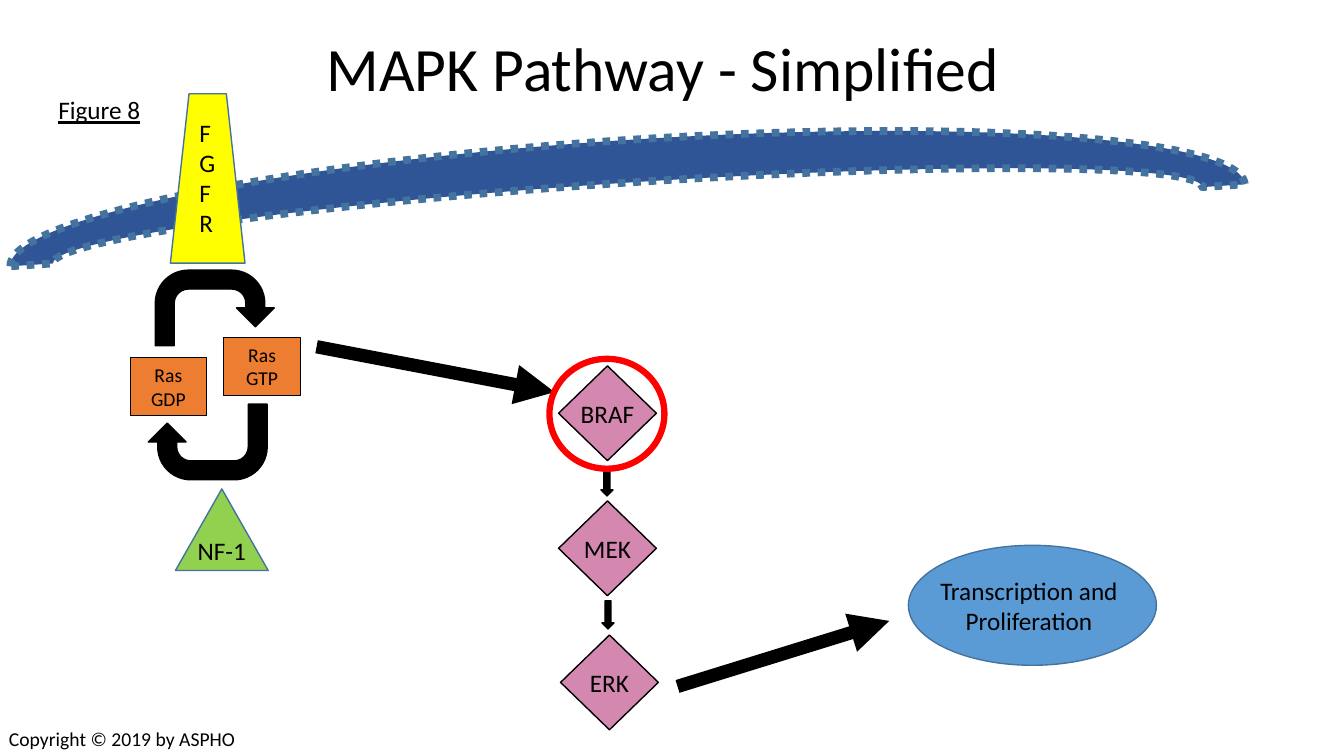
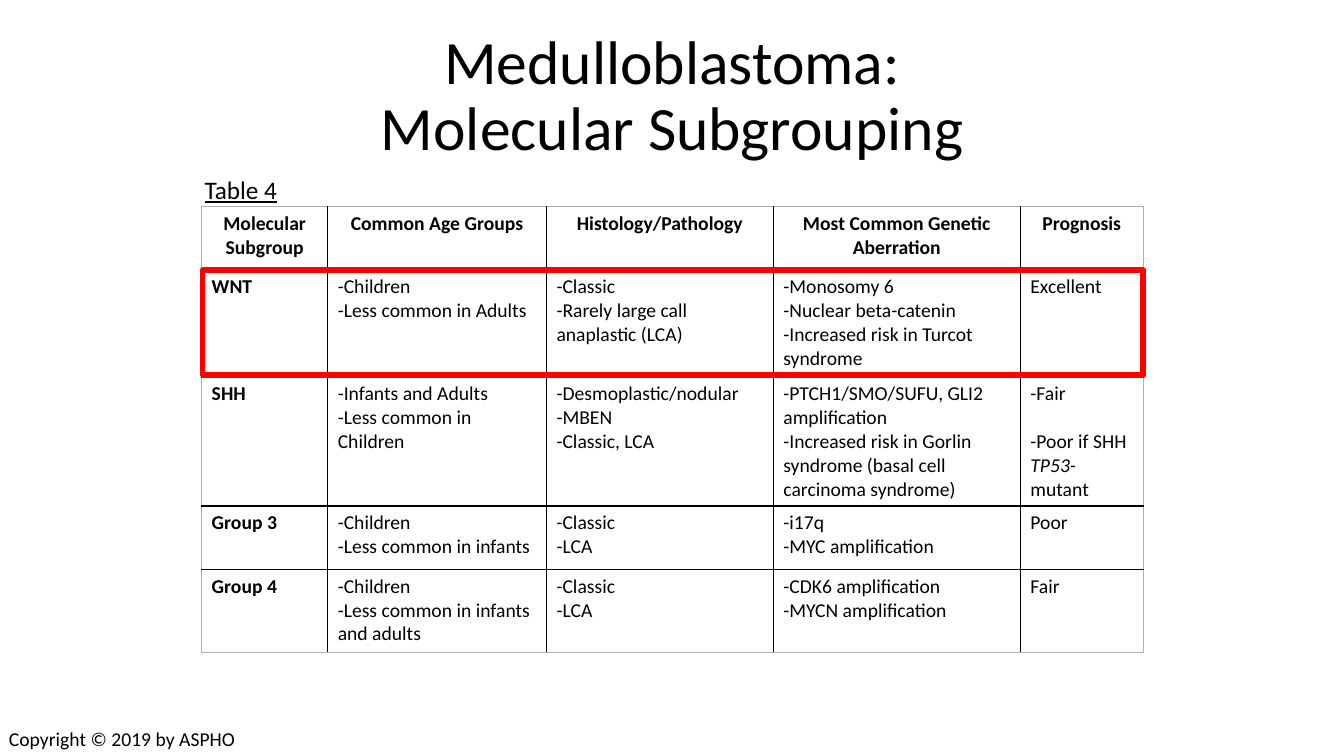
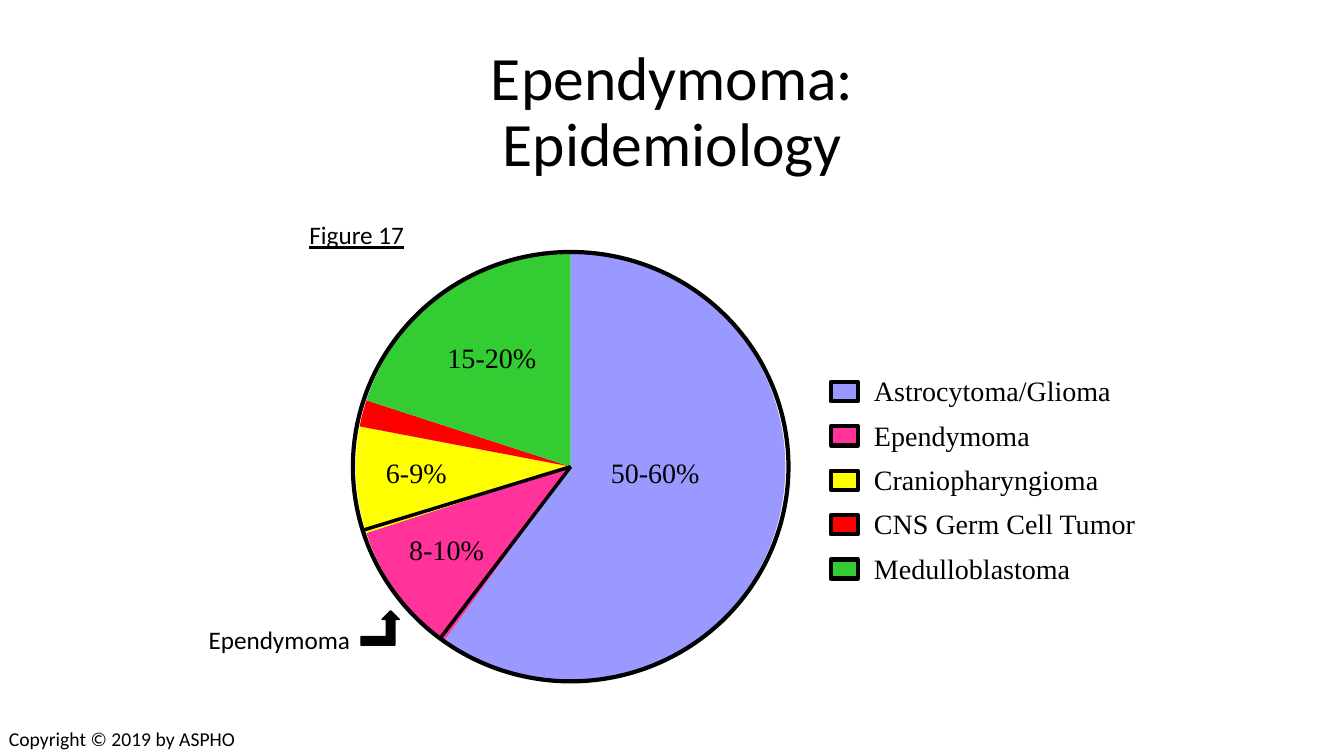
from pptx import Presentation
from pptx.chart.data import CategoryChartData
from pptx.dml.color import RGBColor
from pptx.enum.chart import XL_CHART_TYPE
from pptx.enum.dml import MSO_LINE
from pptx.enum.shapes import MSO_CONNECTOR, MSO_SHAPE
from pptx.enum.text import MSO_ANCHOR, PP_ALIGN
from pptx.oxml import parse_xml
from pptx.oxml.ns import nsdecls, qn
from pptx.oxml.xmlchemy import OxmlElement
from pptx.util import Emu, Pt

# Shared style: 100 px to the inch
BLACK = RGBColor(0x00, 0x00, 0x00)
RED = RGBColor(0xFF, 0x00, 0x00)
YELLOW = RGBColor(0xFF, 0xFF, 0x00)
NAVY = RGBColor(0x2F, 0x55, 0x97)
BLUE = RGBColor(0x5B, 0x9B, 0xD5)
EDGE = RGBColor(0x43, 0x73, 0x9E)
ORANGE = RGBColor(0xED, 0x7D, 0x31)
LIME = RGBColor(0x92, 0xD0, 0x50)
MAGENTA = RGBColor(0xA9, 0x0E, 0x5E)
LAVENDER = RGBColor(0x99, 0x99, 0xFF)
PINK = RGBColor(0xFF, 0x33, 0x99)
GREEN = RGBColor(0x33, 0xCC, 0x33)
GRAY = RGBColor(0xB0, 0xB0, 0xB0)
SANS, SERIF = "Calibri", "Times New Roman"
FOOTER = "Copyright © 2019 by ASPHO"

# Pathway content
RAS_STATES = [("Ras\nGDP", (129, 355, 76, 57)), ("Ras\nGTP", (222, 335, 76, 57))]
RAS_CYCLE = [((154, 268, 118, 75), 0), ((147, 401, 118, 75), 180)]
KINASES = [("BRAF", 554, 363), ("MEK", 554, 497), ("ERK", 556, 630)]
KINASE_STEPS = [(596, 464), (597, 596)]
SIGNALS = [((314, 344), (550, 389)), ((672, 681), (882, 616))]

# Subgroup content: a cell is a list of lines
GENE = "TP53-"
COLUMN_WIDTHS = [125, 217, 225, 245, 122]
ROW_HEIGHTS = [63, 106, 128, 63, 82]
SUBGROUPS = [
    [["Molecular Subgroup"], ["Common Age Groups"], ["Histology/Pathology"],
     ["Most Common Genetic Aberration"], ["Prognosis"]],
    [["WNT"], ["-Children", "-Less common in Adults"],
     ["-Classic", "-Rarely large call anaplastic (LCA)"],
     ["-Monosomy 6", "-Nuclear beta-catenin", "-Increased risk in Turcot syndrome"],
     ["Excellent"]],
    [["SHH"], ["-Infants and Adults", "-Less common in Children"],
     ["-Desmoplastic/nodular", "-MBEN", "-Classic, LCA"],
     ["-PTCH1/SMO/SUFU, GLI2 amplification",
      "-Increased risk in Gorlin syndrome (basal cell carcinoma syndrome)"],
     ["-Fair", "-Poor if SHH TP53-mutant"]],
    [["Group 3"], ["-Children", "-Less common in infants"], ["-Classic", "-LCA"],
     ["-i17q", "-MYC amplification"], ["Poor"]],
    [["Group 4"], ["-Children", "-Less common in infants and adults"],
     ["-Classic", "-LCA"], ["-CDK6 amplification", "-MYCN amplification"], ["Fair"]],
]

# Epidemiology content
TUMORS = [
    ("Astrocytoma/Glioma", 60, LAVENDER),
    ("Ependymoma", 10, PINK),
    ("Craniopharyngioma", 8, YELLOW),
    ("CNS Germ Cell Tumor", 2, RED),
    ("Medulloblastoma", 20, GREEN),
]
SHARES = [("50-60%", 596, 447), ("15-20%", 434, 333), ("8-10%", 396, 523), ("6-9%", 373, 447)]
PIE = (350, 250, 432, 426)
PIE_CENTER = (566, 463)
SLICE_EDGES = [(360, 526), (436, 634)]


def px(value):
    return Emu(value * 9144)


def place(box):
    return [px(value) for value in box]


def format_text(frame, size, font=SANS, align=PP_ALIGN.LEFT, underline=None, spacing=None):
    for paragraph in frame.paragraphs:
        paragraph.alignment = align
        if spacing:
            paragraph.line_spacing = spacing
        for run in paragraph.runs:
            run.font.name = font
            run.font.size = Pt(size)
            run.font.color.rgb = BLACK
            run.font.underline = underline


def add_text(slide, box, text, size=18, anchor=MSO_ANCHOR.TOP, **style):
    frame = slide.shapes.add_textbox(*place(box)).text_frame
    frame.word_wrap = True
    frame.vertical_anchor = anchor
    frame.text = text
    format_text(frame, size, **style)


def add_title(slide, top, text):
    add_text(slide, (92, top, 1150, 145), text, 44, MSO_ANCHOR.MIDDLE,
             align=PP_ALIGN.CENTER, spacing=0.9)


def add_caption(slide, left, top, text):
    add_text(slide, (left, top, 198, 40), text, underline=True)


def add_figure(slide, preset, box, fill=None, line=BLACK, width=1, text="", size=18):
    figure = slide.shapes.add_shape(preset, *place(box))
    figure.shadow.inherit = False
    if fill is None:
        figure.fill.background()
    else:
        figure.fill.solid()
        figure.fill.fore_color.rgb = fill
    figure.line.color.rgb = line
    figure.line.width = Pt(width)
    if text:
        frame = figure.text_frame
        frame.margin_left = frame.margin_right = frame.margin_top = frame.margin_bottom = 0
        frame.word_wrap = False
        frame.vertical_anchor = MSO_ANCHOR.MIDDLE
        frame.text = text
        format_text(frame, size, align=PP_ALIGN.CENTER)
    return figure


def add_line(slide, start, end, width, arrow=False):
    line = slide.shapes.add_connector(MSO_CONNECTOR.STRAIGHT, *place(start + end))
    line.line.color.rgb = BLACK
    line.line.width = Pt(width)
    if arrow:
        line.line._get_or_add_ln().append(
            parse_xml(f'<a:tailEnd {nsdecls("a")} type="triangle"/>'))
    line._element.spPr.append(OxmlElement("a:effectLst"))


def set_alpha(figure, percent):
    color = figure._element.spPr.find(qn("a:solidFill"))[0]
    color.append(parse_xml(f'<a:alpha {nsdecls("a")} val="{percent * 1000}"/>'))


def set_borders(cell, outer_sides):
    properties = cell._tc.get_or_add_tcPr()
    for index, side in enumerate("LRTB"):
        color, width = (GRAY, 6350) if side in outer_sides else (BLACK, 12700)
        properties.insert(index, parse_xml(
            f'<a:ln{side} {nsdecls("a")} w="{width}"><a:solidFill>'
            f'<a:srgbClr val="{color}"/></a:solidFill></a:ln{side}>'))


def fill_cell(cell, lines, bold, align):
    frame = cell.text_frame
    frame.text = lines[0]
    for line in lines[1:]:
        paragraph = frame.add_paragraph()
        before, gene, after = line.partition(GENE)
        for part in filter(None, (before, gene, after)):
            run = paragraph.add_run()
            run.text = part
            run.font.italic = part == GENE
        if gene:
            paragraph.space_before = Pt(17)
    format_text(frame, 14, align=align)
    for paragraph in frame.paragraphs:
        for run in paragraph.runs:
            run.font.bold = bold


def build_pathway(slide):
    # Membrane and receptor
    membrane = add_figure(slide, MSO_SHAPE.BLOCK_ARC, (9, 139, 1227, 169), NAVY, EDGE, 5.5)
    membrane.rotation = 356.2
    membrane.line.dash_style = MSO_LINE.ROUND_DOT
    add_figure(slide, MSO_SHAPE.TRAPEZOID, (169, 93, 74, 168), YELLOW, EDGE)
    add_text(slide, (188, 111, 41, 131), "FGFR")

    # Ras cycle
    for box, rotation in RAS_CYCLE:
        add_figure(slide, MSO_SHAPE.U_TURN_ARROW, box, BLACK).rotation = rotation
    for state, box in RAS_STATES:
        add_figure(slide, MSO_SHAPE.RECTANGLE, box, ORANGE, width=0.75, text=state, size=14)
    add_figure(slide, MSO_SHAPE.ISOSCELES_TRIANGLE, (174, 485, 92, 81), LIME, EDGE, text="NF-1")

    # Kinase cascade
    for start, end in SIGNALS:
        add_line(slide, start, end, 9.5, arrow=True)
    for kinase, left, top in KINASES:
        diamond = add_figure(slide, MSO_SHAPE.DIAMOND, (left, top, 97, 94), MAGENTA, text=kinase)
        set_alpha(diamond, 49)
    for left, top in KINASE_STEPS:
        add_figure(slide, MSO_SHAPE.DOWN_ARROW, (left, top, 12, 28), BLACK)
    add_figure(slide, MSO_SHAPE.OVAL, (545, 356, 114, 109), line=RED, width=4.5)

    # Outcome and headings
    add_figure(slide, MSO_SHAPE.OVAL, (901, 541, 246, 119), BLUE, EDGE)
    add_text(slide, (906, 566, 229, 71), "Transcription and Proliferation", align=PP_ALIGN.CENTER)
    add_text(slide, (314, 25, 833, 84), "MAPK Pathway - Simplified", 44)
    add_caption(slide, 48, 89, "Figure 8")


def build_subgroups(slide):
    add_title(slide, 24, "Medulloblastoma:\nMolecular Subgrouping")
    rows, columns = len(ROW_HEIGHTS), len(COLUMN_WIDTHS)
    box = (200, 205, sum(COLUMN_WIDTHS), sum(ROW_HEIGHTS))
    table = slide.shapes.add_table(rows, columns, *place(box)).table
    table.first_row = table.horz_banding = False
    for column, width in zip(table.columns, COLUMN_WIDTHS):
        column.width = px(width)
    for r, (row, height) in enumerate(zip(table.rows, ROW_HEIGHTS)):
        row.height = px(height)
        for c, cell in enumerate(row.cells):
            header = r == 0
            fill_cell(cell, SUBGROUPS[r][c], header or c == 0,
                      PP_ALIGN.CENTER if header else PP_ALIGN.LEFT)
            cell.fill.background()
            at_edge = {"L": c == 0, "R": c == columns - 1, "T": header, "B": r == rows - 1}
            set_borders(cell, [side for side in at_edge if at_edge[side]])
    add_figure(slide, MSO_SHAPE.RECTANGLE, (201, 268, 933, 104), line=RED, width=4)
    add_caption(slide, 193, 168, "Table 4")


def add_pie(slide):
    shares = CategoryChartData()
    shares.categories = [name for name, _, _ in TUMORS]
    shares.add_series("Share", [share for _, share, _ in TUMORS])
    chart = slide.shapes.add_chart(XL_CHART_TYPE.PIE, *place(PIE), shares).chart
    chart.has_title = chart.has_legend = False
    chart.font.name = SERIF
    chart.font.size = Pt(20)
    plot = chart.plots[0]
    plot.vary_by_categories = True
    for index, (_, _, color) in enumerate(TUMORS):
        slice_format = plot.series[0].points[index].format
        slice_format.fill.solid()
        slice_format.fill.fore_color.rgb = color
        slice_format.line.fill.background()
    # The pie fills its whole frame
    plot_area = chart._chartSpace.chart.plotArea
    for layout in plot_area.findall(qn("c:layout")):
        plot_area.remove(layout)
    plot_area.insert(0, parse_xml(
        f'<c:layout {nsdecls("c")}><c:manualLayout><c:layoutTarget val="inner"/>'
        '<c:xMode val="edge"/><c:yMode val="edge"/><c:x val="0"/><c:y val="0"/>'
        '<c:w val="1"/><c:h val="1"/></c:manualLayout></c:layout>'))


def build_epidemiology(slide):
    add_title(slide, 40, "Ependymoma:\nEpidemiology")

    # Pie with outline, dividers and shares
    add_pie(slide)
    add_figure(slide, MSO_SHAPE.OVAL, PIE, width=3)
    for edge in SLICE_EDGES:
        add_line(slide, edge, PIE_CENTER, 2.5)
    for share, left, top in SHARES:
        add_text(slide, (left, top, 114, 44), share, 20, font=SERIF)

    # Legend
    for index, (name, _, color) in enumerate(TUMORS):
        top = 379 + 44 * index
        add_figure(slide, MSO_SHAPE.RECTANGLE, (824, top, 27, 19), color, width=3)
        add_text(slide, (857, top - 13, 300, 44), name, 20, font=SERIF)

    # Callout
    add_figure(slide, MSO_SHAPE.BENT_UP_ARROW, (358, 606, 38, 34), BLACK)
    add_text(slide, (197, 614, 194, 40), "Ependymoma")
    add_caption(slide, 297, 213, "Figure 17")


def main():
    deck = Presentation()
    deck.slide_width, deck.slide_height = px(1333), px(750)
    for build in (build_pathway, build_subgroups, build_epidemiology):
        slide = deck.slides.add_slide(deck.slide_layouts[6])
        build(slide)
        add_text(slide, (-1, 716, 248, 34), FOOTER, 14)
    deck.save("out.pptx")


if __name__ == "__main__":
    main()
